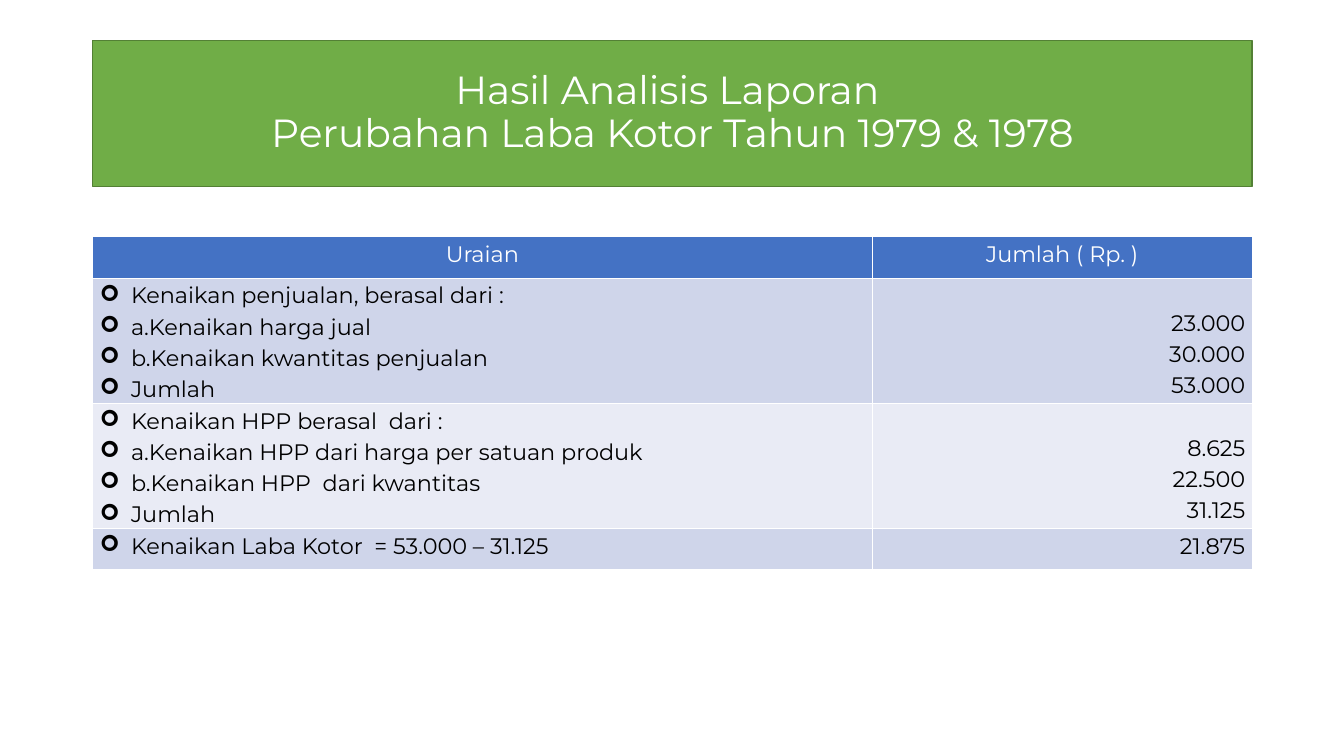
from lxml import etree
from pptx import Presentation
from pptx.dml.color import RGBColor
from pptx.enum.shapes import MSO_SHAPE
from pptx.enum.text import MSO_ANCHOR, PP_ALIGN
from pptx.oxml.ns import qn
from pptx.util import Inches, Pt

RECTANGLE = MSO_SHAPE.RECTANGLE
MIDDLE = MSO_ANCHOR.MIDDLE
LEFT, CENTER, RIGHT = PP_ALIGN.LEFT, PP_ALIGN.CENTER, PP_ALIGN.RIGHT

WHITE = RGBColor(0xFF, 0xFF, 0xFF)
BLACK = RGBColor(0, 0, 0)
GREEN = RGBColor(0x70, 0xAD, 0x47)
DARK_GREEN = RGBColor(0x53, 0x80, 0x35)
BLUE = RGBColor(0x44, 0x72, 0xC4)
BANDS = (RGBColor(0xCF, 0xD5, 0xEA), RGBColor(0xE9, 0xEB, 0xF5))

FONT = "Montserrat"
TITLE = "Hasil Analisis Laporan \nPerubahan Laba Kotor Tahun 1979 & 1978"
HEADERS = ("Uraian", "Jumlah ( Rp. )")
COLUMN_WIDTHS = (7.73, 3.77)
HEADER_HEIGHT = 0.41
# Labels, amounts, row height, and top margin of the amounts
ROWS = (
    (("Kenaikan penjualan, berasal dari :", "a.Kenaikan harga jual",
      "b.Kenaikan kwantitas penjualan", "Jumlah"),
     ("23.000", "30.000", "53.000"), 1.24, 0.27),
    (("Kenaikan HPP berasal  dari :", "a.Kenaikan HPP dari harga per satuan produk",
      "b.Kenaikan HPP  dari kwantitas", "Jumlah"),
     ("8.625", "22.500", "31.125"), 1.24, 0.27),
    (("Kenaikan Laba Kotor  = 53.000 – 31.125",), ("21.875",), 0.41, 0),
)


def add_bullet(paragraph, character="➢", indent=0.31):
    properties = paragraph._p.get_or_add_pPr()
    properties.set("marL", str(Inches(indent)))
    properties.set("indent", str(-Inches(indent)))
    etree.SubElement(properties, qn("a:buFont"), typeface="Wingdings")
    etree.SubElement(properties, qn("a:buChar"), char=character)


def write_text(text_frame, lines, size=16, color=BLACK, align=LEFT,
               spacing=1.15, bullets=False):
    for index, line in enumerate(lines):
        paragraph = text_frame.add_paragraph() if index else text_frame.paragraphs[0]
        paragraph.text = line
        paragraph.alignment = align
        paragraph.line_spacing = spacing
        if bullets:
            add_bullet(paragraph)
        for run in paragraph.runs:
            run.font.name = FONT
            run.font.size = Pt(size)
            run.font.color.rgb = color


class SlideBuilder:
    def __init__(self, slide):
        self.slide = slide

    def banner(self, text, left, top, width, height):
        shape = self.slide.shapes.add_shape(
            RECTANGLE, Inches(left), Inches(top), Inches(width), Inches(height))
        shape.shadow.inherit = False
        shape.fill.solid()
        shape.fill.fore_color.rgb = GREEN
        shape.line.color.rgb = DARK_GREEN
        shape.line.width = Pt(1)
        shape.text_frame.word_wrap = True
        shape.text_frame.vertical_anchor = MIDDLE
        write_text(shape.text_frame, [text], size=28, color=WHITE,
                   align=CENTER, spacing=0.9)

    def cell(self, cell, lines, fill, top_margin=0, **text_format):
        cell.margin_left = cell.margin_right = Inches(0.07)
        cell.margin_top = Inches(top_margin)
        cell.margin_bottom = 0
        properties = cell._tc.get_or_add_tcPr()
        for side in ("lnL", "lnR", "lnT", "lnB"):
            border = etree.SubElement(properties, qn(f"a:{side}"), w=str(Pt(1)))
            solid = etree.SubElement(border, qn("a:solidFill"))
            etree.SubElement(solid, qn("a:srgbClr"), val=str(WHITE))
        cell.fill.solid()
        cell.fill.fore_color.rgb = fill
        write_text(cell.text_frame, lines, **text_format)

    def table(self, left, top):
        heights = [HEADER_HEIGHT] + [row[2] for row in ROWS]
        table = self.slide.shapes.add_table(
            len(heights), len(COLUMN_WIDTHS), Inches(left), Inches(top),
            Inches(sum(COLUMN_WIDTHS)), Inches(sum(heights))).table
        for column, width in zip(table.columns, COLUMN_WIDTHS):
            column.width = Inches(width)
        for row, height in zip(table.rows, heights):
            row.height = Inches(height)
        for column, header in enumerate(HEADERS):
            self.cell(table.cell(0, column), [header], BLUE, color=WHITE, align=CENTER)
        for index, (labels, amounts, _, top_margin) in enumerate(ROWS):
            band = BANDS[index % 2]
            self.cell(table.cell(index + 1, 0), labels, band, bullets=True)
            self.cell(table.cell(index + 1, 1), amounts, band, top_margin, align=RIGHT)


def main():
    presentation = Presentation()
    presentation.slide_width = Inches(13.33)
    presentation.slide_height = Inches(7.5)
    builder = SlideBuilder(presentation.slides.add_slide(presentation.slide_layouts[6]))

    # Title banner
    builder.banner(TITLE, 0.92, 0.4, 11.5, 1.45)
    # Gross profit analysis
    builder.table(0.92, 2.35)

    presentation.save("out.pptx")


if __name__ == "__main__":
    main()
